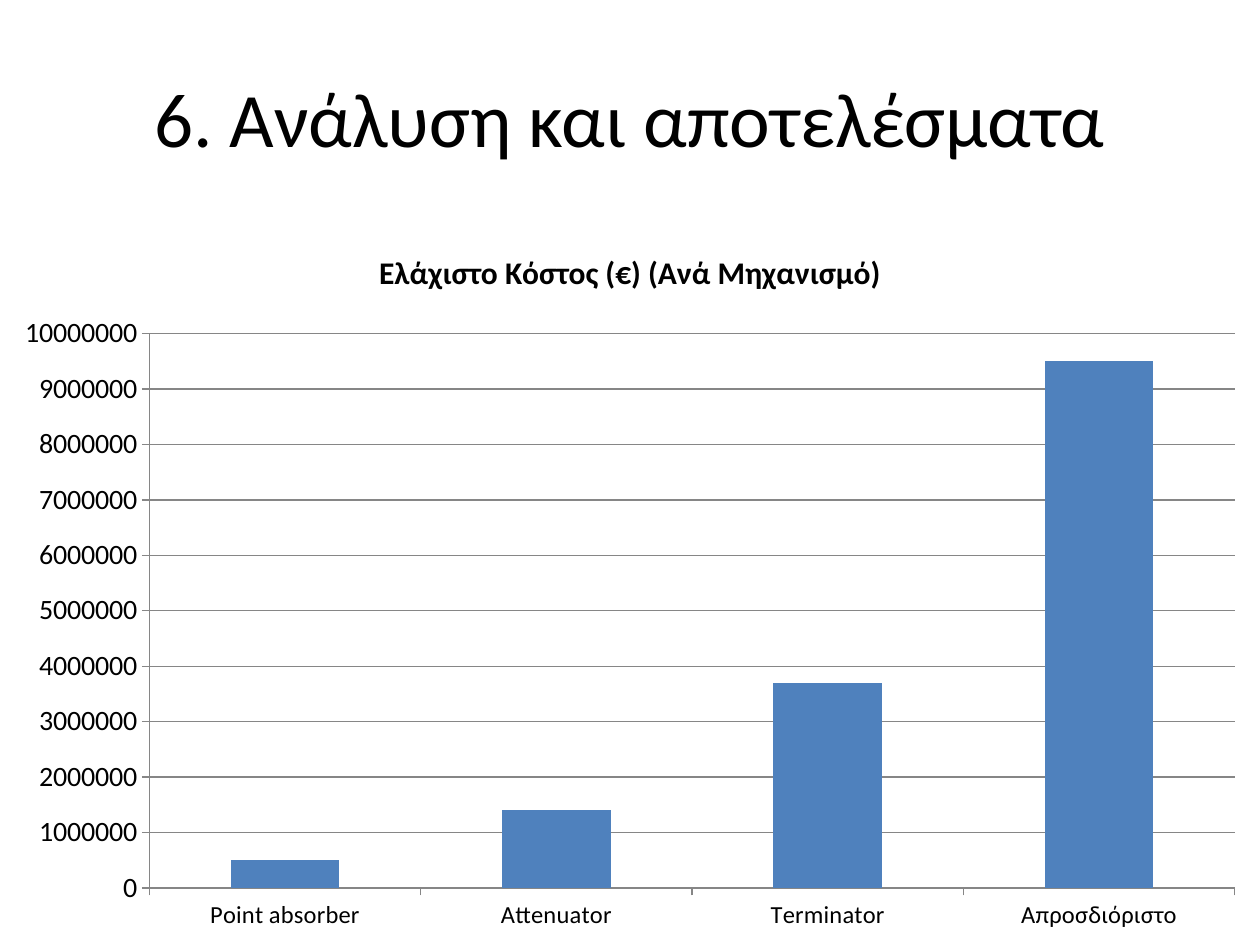
from pptx import Presentation
from pptx.chart.data import CategoryChartData
from pptx.dml.color import RGBColor
from pptx.enum.chart import XL_CHART_TYPE as ChartType, XL_TICK_MARK as TickMark
from pptx.enum.text import MSO_ANCHOR as Anchor, PP_ALIGN as Align
from pptx.util import Emu, Pt

PX_PER_INCH = 126
THEME = {
    "font": "Calibri",
    "text": RGBColor.from_string("000000"),
    "bar": RGBColor.from_string("4F81BD"),
    "line": RGBColor.from_string("868686"),
    "title": Pt(44),
    "chart_title": Pt(18),
    "chart_text": Pt(10),
    "category": Pt(14),
    "value": Pt(16),
}
COSTS = {
    "Point absorber": 500000,
    "Attenuator": 1400000,
    "Terminator": 3700000,
    "Απροσδιόριστο": 9500000,
}


def px(length):
    return Emu(round(length * 914400 / PX_PER_INCH))


def format_font(font, size, bold=False):
    values = {"name": THEME["font"], "size": size, "bold": bold}
    for name, value in values.items():
        setattr(font, name, value)
    font.color.rgb = THEME["text"]


deck = Presentation()
deck.slide_width, deck.slide_height = px(1260), px(945)
page = deck.slides.add_slide(deck.slide_layouts[5])

# Slide title
title = page.shapes.title
frame = {"left": 63, "top": 38, "width": 1134, "height": 157}
for name, length in frame.items():
    setattr(title, name, px(length))
title.text_frame.vertical_anchor = Anchor.MIDDLE
para = title.text_frame.paragraphs[0]
para.alignment = Align.CENTER
span = para.add_run()
span.text = "6. Ανάλυση και αποτελέσματα"
format_font(span.font, THEME["title"])

# Cost chart
data = CategoryChartData(number_format="0")
data.categories = list(COSTS)
data.add_series("Series 1", list(COSTS.values()))
chart = page.shapes.add_chart(
    ChartType.COLUMN_CLUSTERED, px(0), px(224), px(1260), px(721), data
).chart
chart.has_legend = False
format_font(chart.font, THEME["chart_text"])

chart.has_title = True
heading = chart.chart_title.text_frame.paragraphs[0].add_run()
heading.text = "Ελάχιστο Κόστος (€) (Ανά Μηχανισμό)"
format_font(heading.font, THEME["chart_title"], bold=True)

plot = chart.plots[0]
plot.gap_width = 150
plot.vary_by_categories = False
bars = plot.series[0].format.fill
bars.solid()
bars.fore_color.rgb = THEME["bar"]

# Axes
axes = {"category": chart.category_axis, "value": chart.value_axis}
for kind, axis in axes.items():
    axis.major_tick_mark = TickMark.OUTSIDE
    axis.minor_tick_mark = TickMark.NONE
    axis.format.line.color.rgb = THEME["line"]
    format_font(axis.tick_labels.font, THEME[kind])

value_axis = axes["value"]
scale = {"minimum_scale": 0, "maximum_scale": 10000000, "major_unit": 1000000}
for name, value in scale.items():
    setattr(value_axis, name, value)
value_axis.has_major_gridlines = True
value_axis.major_gridlines.format.line.color.rgb = THEME["line"]

deck.save("out.pptx")
